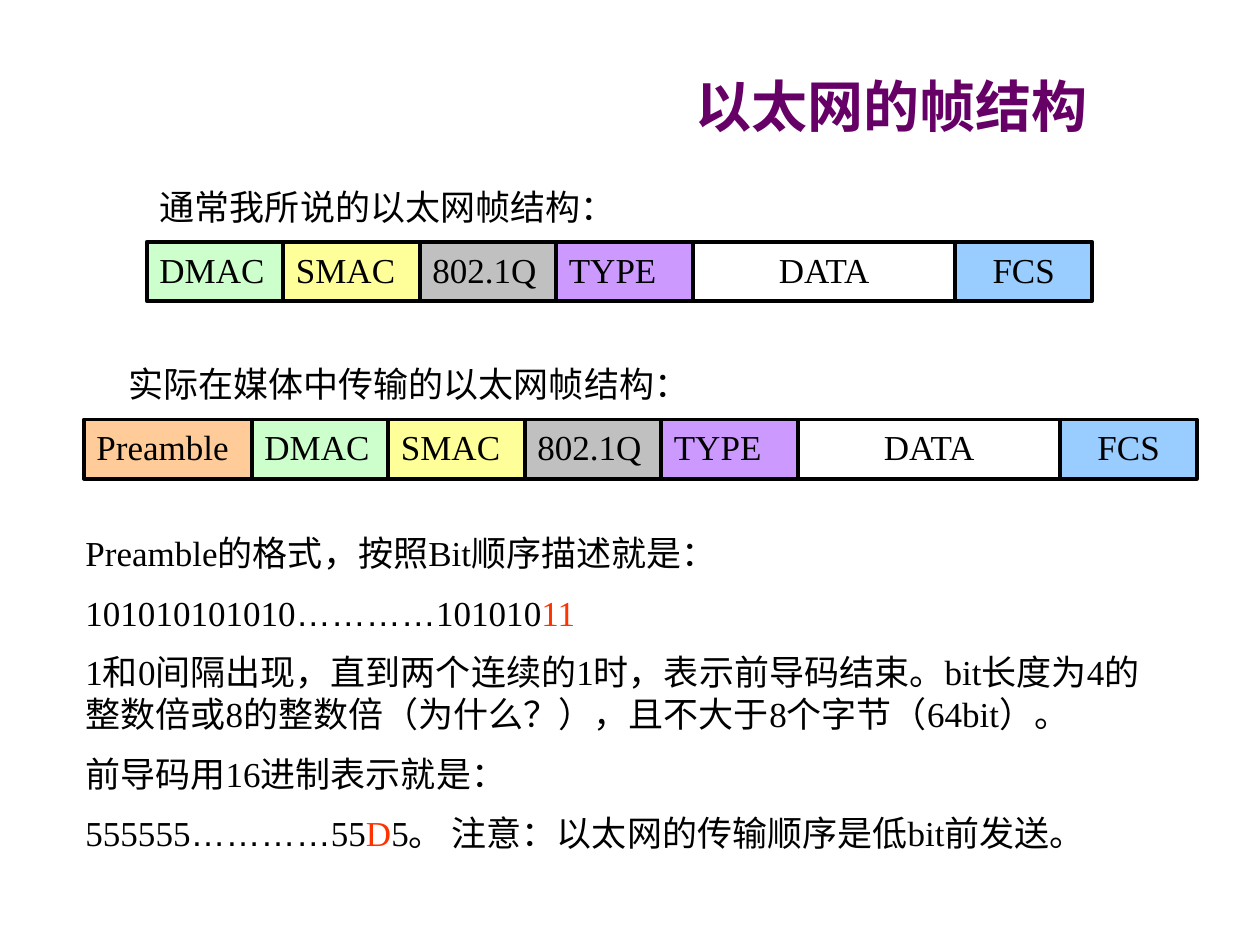
from pptx import Presentation
from pptx import util as u
from pptx.dml import color
from pptx.enum import shapes, text

COLORS = {
    "black": "000000", "white": "FFFFFF", "title": "660066", "mark": "FF3300",
    "Preamble": "FFCC99", "DMAC": "CCFFCC", "SMAC": "FFFF99",
    "802.1Q": "C0C0C0", "TYPE": "CC99FF", "FCS": "99CCFF",
}
SERIF = "Times New Roman"
TOP = text.MSO_ANCHOR.TOP
MIDDLE = text.MSO_ANCHOR.MIDDLE
LEFT = text.PP_ALIGN.LEFT
CENTER = text.PP_ALIGN.CENTER


def rgb(name):
    return color.RGBColor.from_string(COLORS[name])


def write(shape, paragraphs, align=LEFT, anchor=TOP, ink="black", size=20, bold=False):
    """Fill a shape with paragraphs, each a list of (words, font, colour) runs."""
    frame = shape.text_frame
    for key, value in {"word_wrap": True, "vertical_anchor": anchor}.items():
        setattr(frame, key, value)
    for number, runs in enumerate(paragraphs):
        paragraph = frame.paragraphs[0] if number == 0 else frame.add_paragraph()
        paragraph.alignment = align
        if number:
            paragraph.space_before = u.Pt(10)
        for words, font, run_ink in runs:
            run = paragraph.add_run()
            run.text = words
            for key, value in {"name": font, "size": u.Pt(size), "bold": bold}.items():
                setattr(run.font, key, value)
            run.font.color.rgb = rgb(run_ink or ink)


prs = Presentation()
prs.slide_width, prs.slide_height = u.Inches(10), u.Inches(7.5)
slide = prs.slides.add_slide(prs.slide_layouts[6])

# Title
title = slide.shapes.add_shape(shapes.MSO_SHAPE.RECTANGLE, u.Inches(4.83), u.Inches(0.5),
                               u.Inches(4.5), u.Inches(0.67))
title.shadow.inherit = False
title.fill.solid()
title.fill.fore_color.rgb = rgb("white")
title.line.fill.background()
write(title, [[("以太网的帧结构", SERIF, None)]], CENTER, MIDDLE, "title", 32, True)

# Captions above the two frames
for caption, left, top in [("通常我所说的以太网帧结构：", 1.17, 1.42),
                           ("实际在媒体中传输的以太网帧结构：", 0.92, 2.83)]:
    caption_box = slide.shapes.add_textbox(u.Inches(left), u.Inches(top),
                                           u.Inches(4.92), u.Inches(0.43))
    write(caption_box, [[(caption, SERIF, None)]])

# Frame fields, with widths in twelfths of an inch
frame_fields = [("DMAC", 13), ("SMAC", 13), ("802.1Q", 13),
                ("TYPE", 13), ("DATA", 25), ("FCS", 13)]
for start, top, fields in [(14, 1.92, frame_fields),
                           (8, 3.33, [("Preamble", 16)] + frame_fields)]:
    for name, width in fields:
        field = slide.shapes.add_shape(shapes.MSO_SHAPE.RECTANGLE, u.Inches(start / 12),
                                       u.Inches(top), u.Inches(width / 12), u.Inches(0.47))
        field.shadow.inherit = False
        if name in COLORS:
            field.fill.solid()
            field.fill.fore_color.rgb = rgb(name)
        else:
            field.fill.background()
        field.line.color.rgb = rgb("black")
        field.line.width = u.Pt(2.25)
        write(field, [[(name, SERIF, None)]], CENTER if name in ("DATA", "FCS") else LEFT)
        start += width

# Explanation of the preamble
dots = ("…………", "Arial", None)
explanation = slide.shapes.add_textbox(u.Inches(0.58), u.Inches(4.17),
                                       u.Inches(8.83), u.Inches(2.77))
write(explanation, [
    [("Preamble的格式，按照Bit顺序描述就是：", SERIF, None)],
    [("101010101010", SERIF, None), dots, ("101010", SERIF, None), ("11", SERIF, "mark")],
    [("1和0间隔出现，直到两个连续的1时，表示前导码结束。bit长度为4的整数倍或8的整数倍"
      "（为什么？），且不大于8个字节（64bit）。", SERIF, None)],
    [("前导码用16进制表示就是：", SERIF, None)],
    [("555555", SERIF, None), dots, ("55", SERIF, None), ("D", SERIF, "mark"),
     ("5。 注意：以太网的传输顺序是低bit前发送。", SERIF, None)],
])

prs.save("out.pptx")
